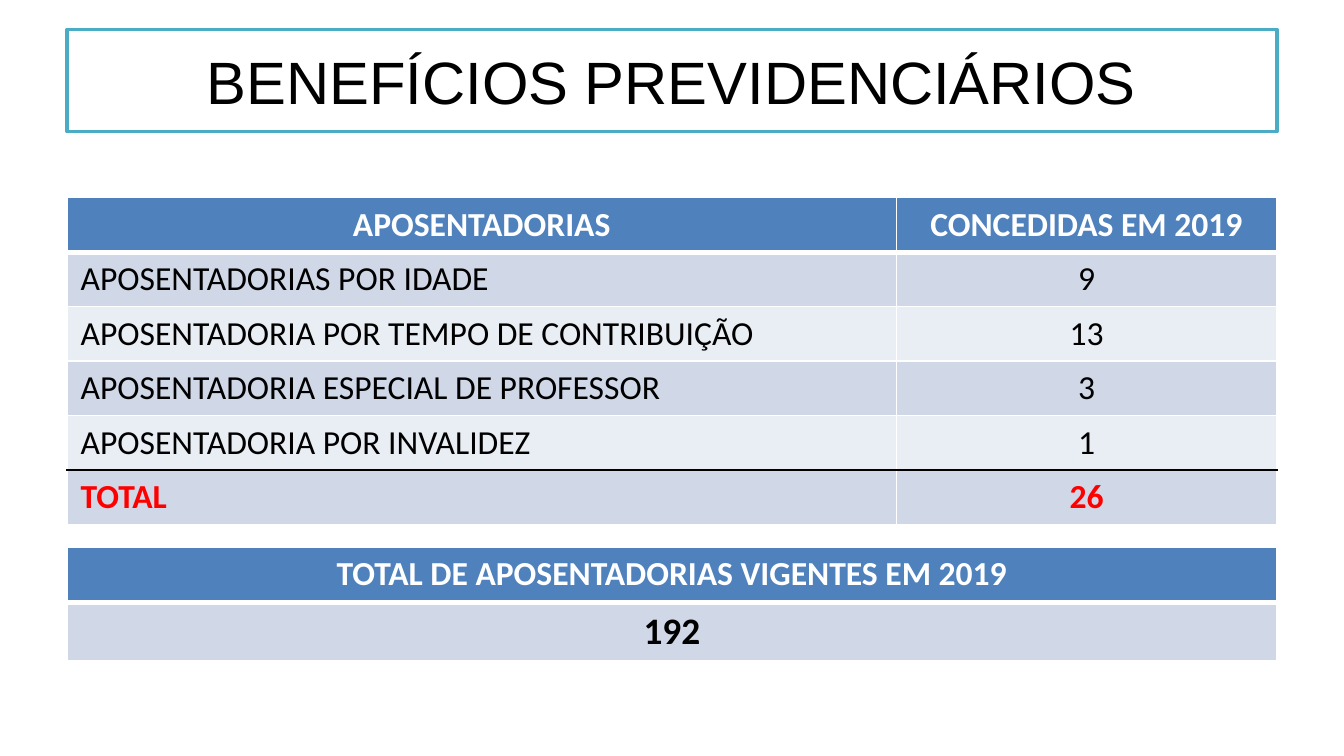
from lxml import etree
from pptx import Presentation
from pptx.dml.color import RGBColor
from pptx.enum import shapes, text
from pptx.oxml import ns
from pptx.util import Inches, Pt

HEADING = "BENEFÍCIOS PREVIDENCIÁRIOS"
GRANTED = [
    ("APOSENTADORIAS", "CONCEDIDAS EM 2019"),
    ("APOSENTADORIAS POR IDADE", "9"),
    ("APOSENTADORIA POR TEMPO DE CONTRIBUIÇÃO", "13"),
    ("APOSENTADORIA ESPECIAL DE PROFESSOR", "3"),
    ("APOSENTADORIA POR INVALIDEZ", "1"),
    ("TOTAL", "26"),
]
ACTIVE = [("TOTAL DE APOSENTADORIAS VIGENTES EM 2019",), ("192",)]

THEME = {
    "heading_font": "Arial", "table_font": "Calibri",
    "heading_size": 32, "table_size": 18, "active_size": 20,
    "white": "FFFFFF", "black": "000000", "red": "FF0000",
    "frame": "4BACC6", "header": "4F81BD", "bands": ("D0D8E8", "E9EDF4"),
}
LEFT, WIDTH = 0.5, 9
THIN, THICK = 1, 3


def color(name):
    return RGBColor.from_string(THEME.get(name, name))


def add_border(cell, side, name, width):
    line = etree.SubElement(cell._tc.get_or_add_tcPr(), ns.qn(f"a:ln{side}"), w=str(Pt(width)))
    fill = etree.SubElement(line, ns.qn("a:solidFill"))
    etree.SubElement(fill, ns.qn("a:srgbClr"), val=THEME[name])


def add_grid(slide, rows, top, widths, heights, styles, edges):
    grid = slide.shapes.add_table(
        len(rows), len(widths), Inches(LEFT), Inches(top), Inches(WIDTH), Inches(sum(heights))
    ).table
    for column, width in zip(grid.columns, widths):
        column.width = Inches(width)
    for r, (labels, height) in enumerate(zip(rows, heights)):
        grid.rows[r].height = Inches(height)
        ink, size, bold, anchor = styles[r]
        for c, label in enumerate(labels):
            cell = grid.cell(r, c)
            cell.text = label
            cell.vertical_anchor = anchor
            for side, (name, width) in {
                "L": ("white", THIN), "R": ("white", THIN),
                "T": edges.get(r, ("white", THIN)),
                "B": edges.get(r + 1, ("white", THIN)),
            }.items():
                add_border(cell, side, name, width)
            cell.fill.solid()
            cell.fill.fore_color.rgb = color("header" if r == 0 else THEME["bands"][(r - 1) % 2])
            line = cell.text_frame.paragraphs[0]
            centred = r == 0 or c == len(labels) - 1
            line.alignment = text.PP_ALIGN.CENTER if centred else text.PP_ALIGN.LEFT
            line.font.name = THEME["table_font"]
            line.font.size = Pt(THEME[size])
            line.font.bold = bold
            line.font.color.rgb = color(ink)


def add_heading(slide):
    banner = slide.shapes.add_shape(
        shapes.MSO_SHAPE.RECTANGLE, Inches(LEFT), Inches(0.22), Inches(WIDTH), Inches(0.76)
    )
    banner.shadow.inherit = False
    banner.fill.solid()
    banner.fill.fore_color.rgb = color("white")
    banner.line.color.rgb = color("frame")
    banner.line.width = Pt(2)
    banner.text_frame.word_wrap = True
    banner.text_frame.vertical_anchor = text.MSO_ANCHOR.MIDDLE
    title = banner.text_frame.paragraphs[0]
    title.text = HEADING
    title.alignment = text.PP_ALIGN.CENTER
    title.font.name = THEME["heading_font"]
    title.font.size = Pt(THEME["heading_size"])
    title.font.color.rgb = color("black")


def main():
    deck = Presentation()
    deck.slide_width = Inches(10)
    deck.slide_height = deck.slide_width * 9 // 16
    slide = deck.slides.add_slide(deck.slide_layouts[6])
    add_heading(slide)

    at_top, at_middle = text.MSO_ANCHOR.TOP, text.MSO_ANCHOR.MIDDLE
    header = ("white", "table_size", True, at_top)
    item = ("black", "table_size", False, at_top)
    total = ("red", "table_size", True, at_top)
    active = ("black", "active_size", True, at_middle)
    last = len(GRANTED) - 1
    under_header = {1: ("white", THICK)}

    add_grid(slide, GRANTED, 1.47, [6.17, 2.83], [2.43 / len(GRANTED)] * len(GRANTED),
             [header] + [item] * (last - 1) + [total],
             {**under_header, last: ("black", THIN)})
    add_grid(slide, ACTIVE, 4.07, [WIDTH], [0.41, 0.43], [header, active], under_header)
    deck.save("out.pptx")


if __name__ == "__main__":
    main()
